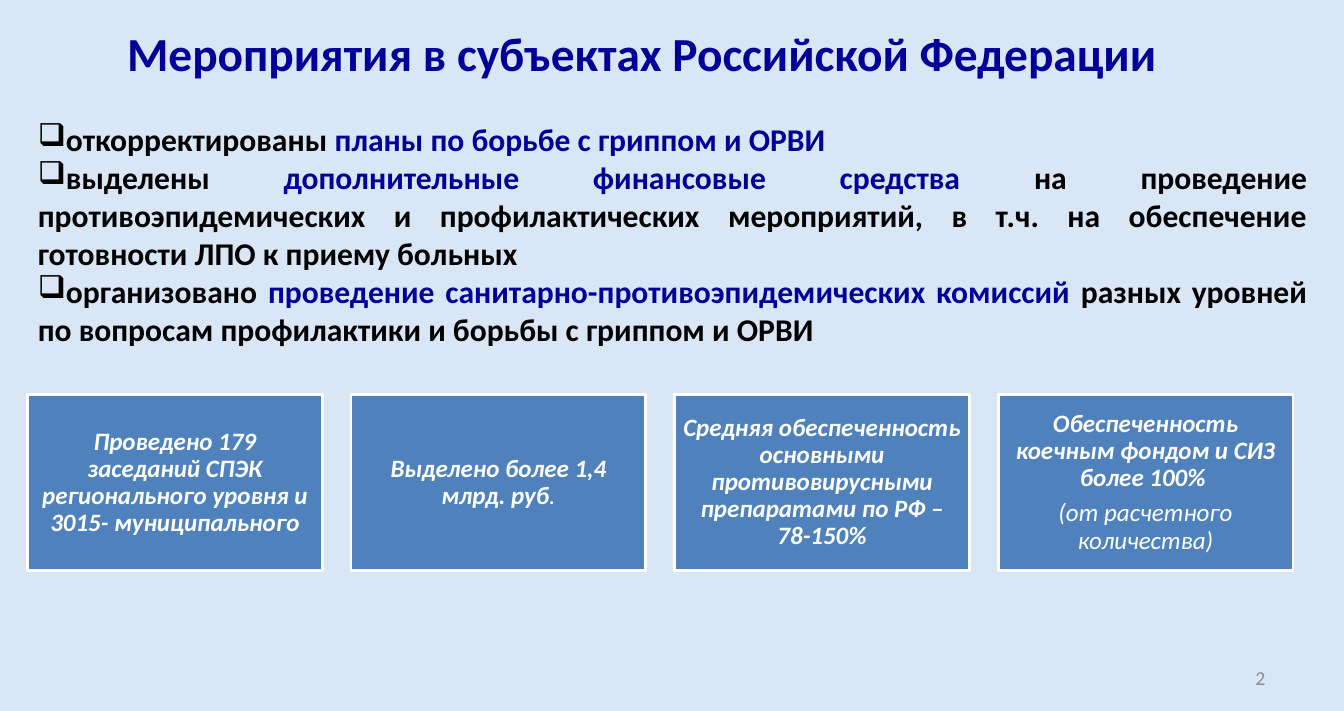
"""Build a slide on regional measures against influenza."""
from dataclasses import dataclass

from lxml.etree import SubElement
from pptx import Presentation
from pptx.dml.color import RGBColor as Rgb
from pptx.enum.shapes import MSO_SHAPE as Shape
from pptx.enum.text import MSO_ANCHOR as Anchor, MSO_AUTO_SIZE as AutoSize, PP_ALIGN as Align
from pptx.oxml.ns import qn
from pptx.util import Pt


@dataclass(frozen=True)
class Theme:
    """Colours and type sizes of the slide."""
    font: str = "Calibri"
    backdrop: Rgb = Rgb(0xD9, 0xE6, 0xF5)
    accent: Rgb = Rgb(0x00, 0x00, 0x99)
    ink: Rgb = Rgb(0x00, 0x00, 0x00)
    card: Rgb = Rgb(0x4F, 0x81, 0xBD)
    white: Rgb = Rgb(0xFF, 0xFF, 0xFF)
    muted: Rgb = Rgb(0x8C, 0x8C, 0x8C)
    title_size: Pt = Pt(36)
    body_size: Pt = Pt(24)
    card_size: Pt = Pt(19)
    number_size: Pt = Pt(15)


THEME = Theme()

MEASURES = [
    ("откорректированы ", "планы по борьбе с гриппом и ОРВИ", ""),
    ("выделены ", "дополнительные финансовые средства",
     " на проведение противоэпидемических и профилактических мероприятий, "
     "в т.ч. на обеспечение готовности ЛПО к приему больных"),
    ("организовано ", "проведение санитарно-противоэпидемических комиссий",
     " разных уровней по вопросам профилактики и борьбы с гриппом и ОРВИ"),
]

BOLD, PLAIN = True, False
RESULTS = [
    [[("Проведено 179 заседаний СПЭК регионального уровня и 3015- муниципального", BOLD)]],
    [[("Выделено более 1,4 млрд. руб", BOLD), (".", PLAIN)]],
    [[("Средняя обеспеченность основными противовирусными препаратами по РФ – 78-150%", BOLD)]],
    [[("Обеспеченность коечным фондом и СИЗ более 100% ", BOLD)],
     [("(от расчетного количества)", PLAIN)]],
]

CARD_LEFT, CARD_TOP, CARD_WIDTH, CARD_HEIGHT, CARD_STEP = 20.9, 299.5, 223.9, 133.9, 245.8


def assign(target, values):
    """Set each named attribute on the target."""
    for name, value in values.items():
        setattr(target, name, value)


def set_margins(frame, across, down):
    """Set the side margins and the top and bottom margins of a text frame."""
    assign(frame, {"margin_left": Pt(across), "margin_right": Pt(across),
                   "margin_top": Pt(down), "margin_bottom": Pt(down)})


def add_span(para, text, size, color, **style):
    """Append a formatted run to a paragraph."""
    span = para.add_run()
    span.text = text
    assign(span.font, {"name": THEME.font, "size": size, **style})
    span.font.color.rgb = color


def each_para(frame, items):
    """Yield a paragraph of the frame together with each item."""
    for index, item in enumerate(items):
        yield (frame.add_paragraph() if index else frame.paragraphs[0]), item


def add_box(page, left, top, width, height, **settings):
    """Add a text box and return its text frame."""
    frame = page.shapes.add_textbox(Pt(left), Pt(top), Pt(width), Pt(height)).text_frame
    assign(frame, {"word_wrap": True, **settings})
    return frame


def add_title(page, text):
    """Add the centred heading."""
    frame = add_box(page, 79.2, 15.1, 825.1, 51.1, word_wrap=False,
                    auto_size=AutoSize.SHAPE_TO_FIT_TEXT)
    para = frame.paragraphs[0]
    para.alignment = Align.CENTER
    add_span(para, text, THEME.title_size, THEME.accent, bold=True)


def add_measures(page):
    """Add the justified list of measures with square bullets."""
    frame = add_box(page, 21.6, 87.8, 978.5, 181.4, auto_size=AutoSize.SHAPE_TO_FIT_TEXT)
    for para, parts in each_para(frame, MEASURES):
        para.alignment = Align.JUSTIFY
        SubElement(para._p.get_or_add_pPr(), qn("a:buChar"), char="❑")
        for text, color in zip(parts, (THEME.ink, THEME.accent, THEME.ink)):
            if text:
                add_span(para, text, THEME.body_size, color, bold=True)


def add_card(page, left, paragraphs):
    """Add one result card with its text."""
    card = page.shapes.add_shape(Shape.RECTANGLE, Pt(left), Pt(CARD_TOP),
                                 Pt(CARD_WIDTH), Pt(CARD_HEIGHT))
    card.shadow.inherit = False
    card.fill.solid()
    card.fill.fore_color.rgb = THEME.card
    card.line.color.rgb = THEME.white
    card.line.width = Pt(2)
    frame = card.text_frame
    assign(frame, {"word_wrap": True, "vertical_anchor": Anchor.MIDDLE})
    set_margins(frame, 5.7, 5.7)
    for para, spans in each_para(frame, paragraphs):
        assign(para, {"alignment": Align.CENTER, "line_spacing": 0.9, "space_after": Pt(6.65)})
        for text, bold in spans:
            add_span(para, text, THEME.card_size, THEME.white, bold=bold, italic=True)


def add_number(page, text):
    """Add the page number at the lower right."""
    frame = add_box(page, 731.5, 500.4, 238.3, 28.8, vertical_anchor=Anchor.MIDDLE)
    set_margins(frame, 8.6, 4.3)
    para = frame.paragraphs[0]
    para.alignment = Align.RIGHT
    add_span(para, text, THEME.number_size, THEME.muted)


def main():
    """Build and save the deck."""
    deck = Presentation()
    assign(deck, {"slide_width": Pt(1021), "slide_height": Pt(540)})
    page = deck.slides.add_slide(deck.slide_layouts[6])
    page.background.fill.solid()
    page.background.fill.fore_color.rgb = THEME.backdrop
    add_number(page, "2")
    add_measures(page)
    for index, paragraphs in enumerate(RESULTS):
        add_card(page, CARD_LEFT + index * CARD_STEP, paragraphs)
    add_title(page, "Мероприятия в субъектах Российской Федерации ")
    deck.save("out.pptx")


if __name__ == "__main__":
    main()
